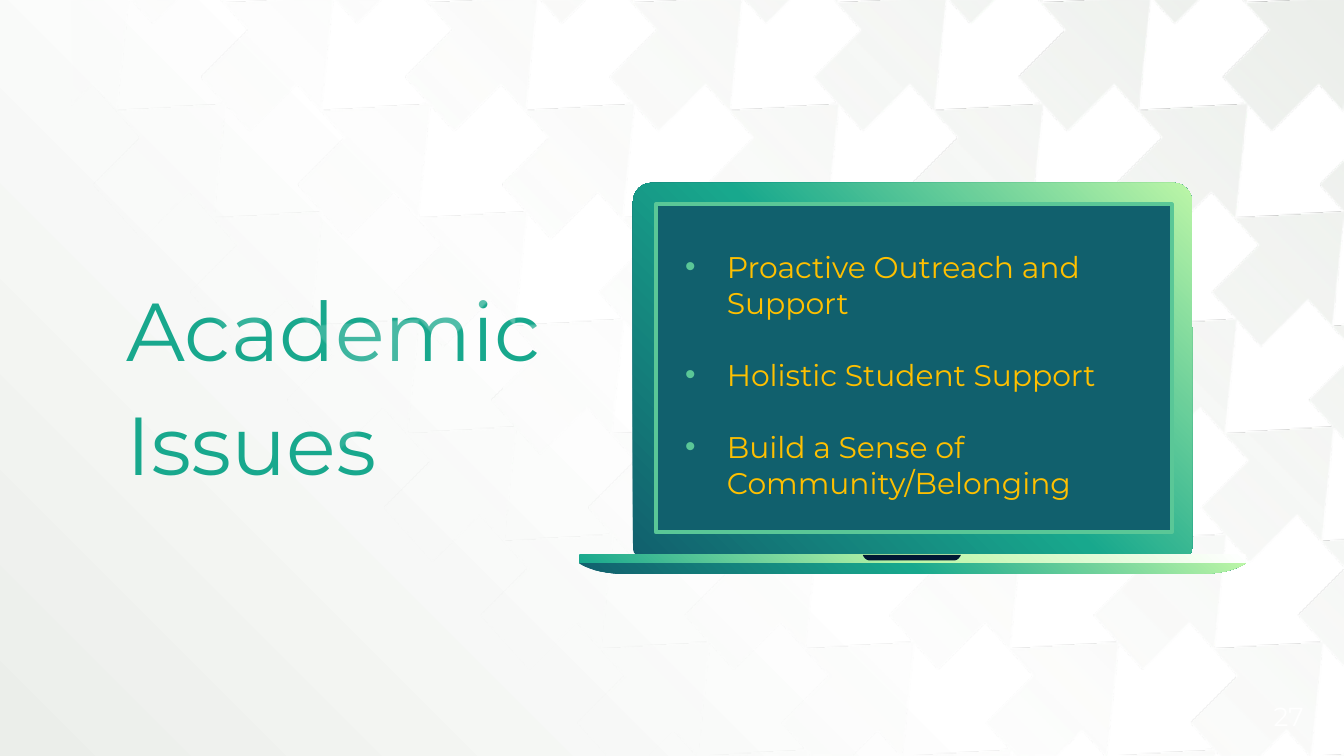
from dataclasses import dataclass
from itertools import product

from lxml import etree
from pptx import Presentation
from pptx.dml.color import RGBColor
from pptx.enum.shapes import MSO_SHAPE
from pptx.enum.text import MSO_ANCHOR, PP_ALIGN
from pptx.oxml.ns import qn
from pptx.util import Inches, Pt

RECTANGLE = MSO_SHAPE.RECTANGLE
LID_SHAPE = MSO_SHAPE.ROUND_2_SAME_RECTANGLE
TOP, MIDDLE = MSO_ANCHOR.TOP, MSO_ANCHOR.MIDDLE
LEFT, RIGHT = PP_ALIGN.LEFT, PP_ALIGN.RIGHT

# The slide is a grid of square cells, 100 columns by 56.25 rows.
COLUMNS, ROWS = 100, 56.25
CELL = Inches(0.1)

FONT = "Montserrat"
GREEN, TEAL, MINT, GOLD = "18A88D", "11606D", "5AC797", "FFC000"
WHITE, MIST, LIME, NAVY = "FFFFFF", "EBEEEA", "BCF6A7", "011733"

# One gap between the pattern's arrows, and the two steps that repeat it.
GAP_OUTLINE = [(8, -8), (9.8, -6), (6.3, -2.5), (8.1, -0.5),
               (9.9, 1.5), (13.4, -2), (15.2, 0), (16.1, -8.5)]
PATTERN_START = (8.7, 8.3)
STEP_RIGHT = 15.2
STEP_DOWN = (7.2, 8)
PATTERN_LEFT = 5.3

STRATEGIES = [
    "Proactive Outreach and Support",
    "Holistic Student Support",
    "Build a Sense of Community/Belonging",
]

Point = tuple[float, float]


@dataclass(frozen=True)
class Box:
    """A place on the grid, in columns and rows."""
    left: float
    top: float
    width: float
    height: float

    def emu(self) -> list[int]:
        return [cells(n) for n in (self.left, self.top, self.width, self.height)]


@dataclass(frozen=True)
class Stop:
    percent: int
    color: str
    opacity: int = 100


LID = Box(47.1, 13.6, 41.6, 27.8)
SCREEN = Box(48.8, 15.2, 38.4, 24.4)
TRAY = Box(43.1, 41.9, 49.6, 0.8)
HINGE = Box(43.1, 41.3, 49.6, 0.6)
NOTCH = Box(64.2, 41.3, 7.3, 0.4)
TITLE = Box(9.4, 4.1, 36.2, 48.1)
STRATEGY_LIST = Box(50, 18, 39.9, 23.9)
PAGE_NUMBER = Box(90, 51.5, 8, 3.6)

BACKDROP_STOPS = [Stop(0, WHITE), Stop(50, WHITE), Stop(100, MIST)]
PATTERN_STOPS = [Stop(0, MIST), Stop(80, WHITE, 0), Stop(100, WHITE, 0)]
BODY_STOPS = [Stop(0, LIME), Stop(50, GREEN), Stop(100, TEAL)]
HINGE_STOPS = [Stop(0, WHITE), Stop(50, LIME), Stop(100, GREEN)]


def cells(count: float) -> int:
    return round(count * CELL)


def rgb(color: str) -> RGBColor:
    return RGBColor.from_string(color)


def paint_gradient(fill, owner, stops: list[Stop], angle: int | None = None) -> None:
    """Fade along an angle, or out from the top right corner if there is none."""
    fill.gradient()
    gradient = owner.find(".//" + qn("a:gradFill"))
    for child in list(gradient):
        gradient.remove(child)
    stop_list = etree.SubElement(gradient, qn("a:gsLst"))
    for stop in stops:
        mark = etree.SubElement(stop_list, qn("a:gs"), pos=str(stop.percent * 1000))
        color = etree.SubElement(mark, qn("a:srgbClr"), val=stop.color)
        if stop.opacity < 100:
            etree.SubElement(color, qn("a:alpha"), val=str(stop.opacity * 1000))
    if angle is None:
        circle = etree.SubElement(gradient, qn("a:path"), {"path": "circle"})
        etree.SubElement(circle, qn("a:fillToRect"), l="100000", b="100000")
    else:
        etree.SubElement(gradient, qn("a:lin"), ang=str(angle * 60000), scaled="0")


def finish(shape, paint: str | list[Stop], angle: int | None = None) -> None:
    shape.shadow.inherit = False
    shape.line.fill.background()
    if isinstance(paint, str):
        shape.fill.solid()
        shape.fill.fore_color.rgb = rgb(paint)
    else:
        paint_gradient(shape.fill, shape.element, paint, angle)


def add_outlines(slide, outlines: list[list[Point]]):
    """Join closed outlines into one freeform."""
    corners = [[(cells(x), cells(y)) for x, y in outline] for outline in outlines]
    builder = slide.shapes.build_freeform(*corners[0][0])
    for index, (start, *others) in enumerate(corners):
        if index:
            builder.move_to(*start)
        builder.add_line_segments(others, close=True)
    return builder.convert_to_shape()


def clip(outline: list[Point], axis: int, limit: float, sign: int) -> list[Point]:
    """Keep the part above the limit (sign 1) or below it (sign -1)."""
    kept = []
    for start, end in zip(outline, outline[1:] + outline[:1]):
        before, after = sign * (start[axis] - limit), sign * (end[axis] - limit)
        if before >= 0:
            kept.append(start)
        if before * after < 0:
            share = before / (before - after)
            kept.append((start[0] + share * (end[0] - start[0]),
                         start[1] + share * (end[1] - start[1])))
    return kept


def pattern_gaps() -> list[list[Point]]:
    gaps = []
    for row, column in product(range(-1, 8), range(-1, 7)):
        x = PATTERN_START[0] + column * STEP_RIGHT + row * STEP_DOWN[0]
        y = PATTERN_START[1] + row * STEP_DOWN[1]
        gap = [(x + dx, y + dy) for dx, dy in GAP_OUTLINE]
        for edge in ((0, PATTERN_LEFT, 1), (0, COLUMNS, -1), (1, 0, 1), (1, ROWS, -1)):
            gap = clip(gap, *edge)
        if len(gap) > 2:
            gaps.append(gap)
    return gaps


def add_bowl(slide, box: Box, inset: float):
    """Draw a flat-topped strip whose lower corners curve inwards."""
    steps = [n / 10 for n in range(11)]
    curve = [(inset * (0.9 * t * t * (1 - t) + t ** 3),
              box.height * (3 * t * t * (1 - t) + t ** 3)) for t in steps]
    left_side = [(box.left + x, box.top + y) for x, y in curve]
    right_side = [(box.left + box.width - x, box.top + y) for x, y in reversed(curve)]
    return add_outlines(slide, [left_side + right_side])


def write(shape, box: Box, lines: list[str], size: int, color: str,
          anchor=TOP, align=LEFT) -> None:
    shape.left, shape.top, shape.width, shape.height = box.emu()
    frame = shape.text_frame
    frame.word_wrap = True
    frame.vertical_anchor = anchor
    frame.text = "\n".join(lines)
    for paragraph in frame.paragraphs:
        paragraph.alignment = align
        font = paragraph.runs[0].font
        font.name, font.size, font.color.rgb = FONT, Pt(size), rgb(color)


def add_bullet(paragraph, color: str) -> None:
    properties = paragraph._p.get_or_add_pPr()
    properties.set("marL", str(Inches(0.31)))
    properties.set("indent", str(-Inches(0.31)))
    bullet_color = etree.SubElement(properties, qn("a:buClr"))
    etree.SubElement(bullet_color, qn("a:srgbClr"), val=color)
    etree.SubElement(properties, qn("a:buFont"), typeface="Arial")
    etree.SubElement(properties, qn("a:buChar"), char="•")


def draw_laptop(slide) -> None:
    lid = slide.shapes.add_shape(LID_SHAPE, *LID.emu())
    lid.adjustments[0], lid.adjustments[1] = 0.05, 0.02
    finish(lid, BODY_STOPS)
    finish(add_bowl(slide, TRAY, 3.4), BODY_STOPS)
    finish(slide.shapes.add_shape(RECTANGLE, *HINGE.emu()), HINGE_STOPS)
    finish(add_bowl(slide, NOTCH, 0.5), NAVY)
    screen = slide.shapes.add_shape(RECTANGLE, *SCREEN.emu())
    finish(screen, TEAL)
    screen.line.color.rgb = rgb(MINT)
    screen.line.width = Pt(2)


def main() -> None:
    deck = Presentation()
    deck.slide_width, deck.slide_height = cells(COLUMNS), cells(ROWS)
    slide = deck.slides.add_slide(deck.slide_layouts[5])
    paint_gradient(slide.background.fill, slide.element, BACKDROP_STOPS)
    finish(add_outlines(slide, pattern_gaps()), PATTERN_STOPS, 135)
    draw_laptop(slide)

    title = slide.shapes.title
    write(title, TITLE, ["Academic Issues"], 44, GREEN, anchor=MIDDLE)
    frame = title.text_frame
    frame.margin_left = frame.margin_right = frame.margin_top = frame.margin_bottom = 0
    frame.paragraphs[0].line_spacing = 1.15

    strategies = slide.shapes.add_textbox(*STRATEGY_LIST.emu())
    write(strategies, STRATEGY_LIST, STRATEGIES, 16, GOLD)
    for index, paragraph in enumerate(strategies.text_frame.paragraphs):
        paragraph.space_before = Pt(19.5 if index else 0)
        add_bullet(paragraph, MINT)

    page_number = slide.shapes.add_textbox(*PAGE_NUMBER.emu())
    write(page_number, PAGE_NUMBER, ["27"], 14, WHITE, anchor=MIDDLE, align=RIGHT)
    deck.save("out.pptx")


if __name__ == "__main__":
    main()
